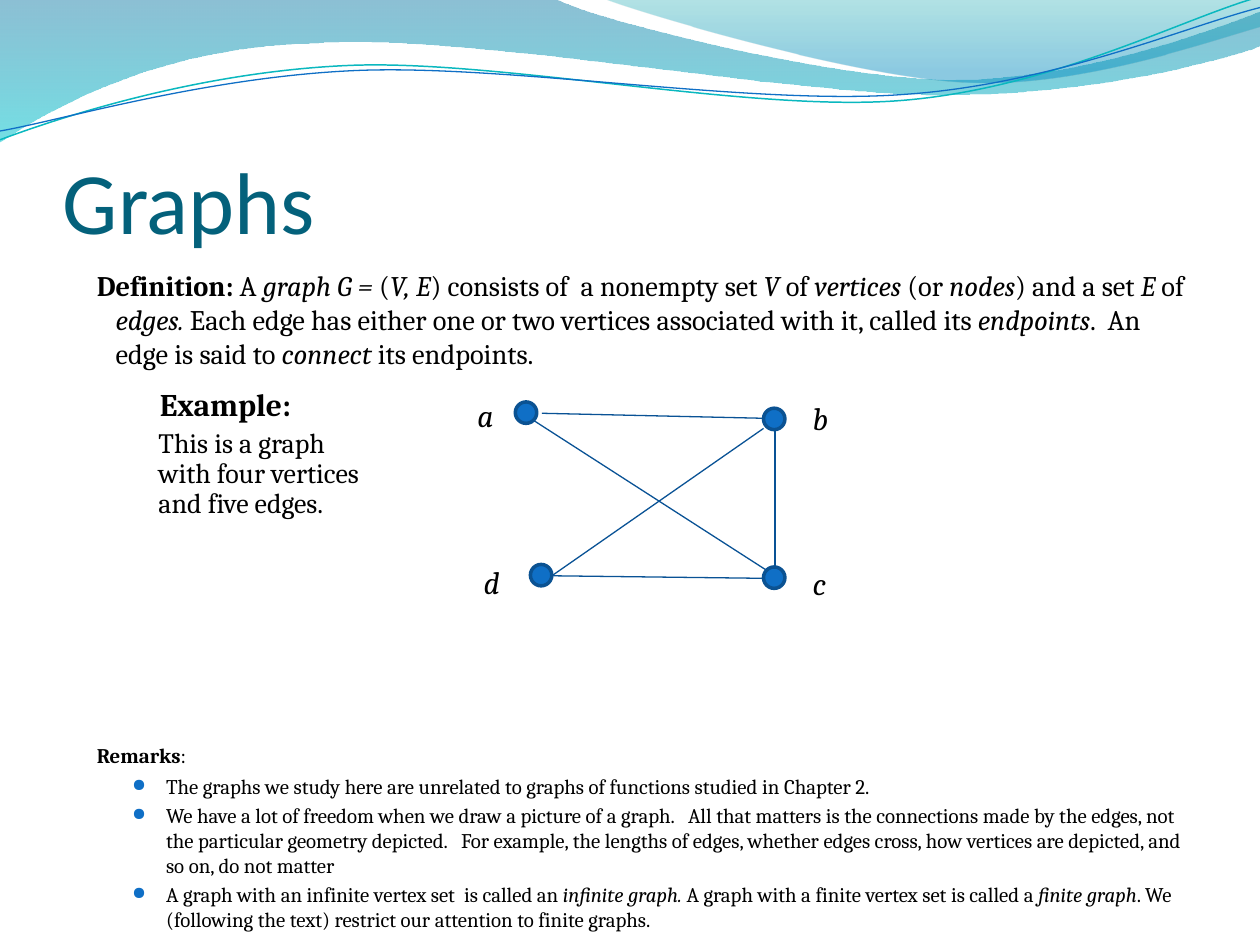
import pptx
import pptx.dml.color
import pptx.enum.shapes
import pptx.enum.text
import pptx.oxml
import pptx.oxml.ns
import pptx.util
from lxml import etree

Inches = pptx.util.Inches
Pt = pptx.util.Pt
RGBColor = pptx.dml.color.RGBColor
ANCHOR = pptx.enum.text.MSO_ANCHOR
qn = pptx.oxml.ns.qn

BLACK = RGBColor(0x00, 0x00, 0x00)
TITLE_TEAL = RGBColor(0x04, 0x61, 0x7B)
BLUE = RGBColor(0x0F, 0x6F, 0xC6)
VERTEX_RIM = RGBColor(0x0B, 0x52, 0x92)
EDGE_BLUE = RGBColor(0x09, 0x52, 0x95)
WAVE_TEAL = RGBColor(0x0A, 0xB8, 0xBF)
BAND_STOPS = [(0, RGBColor(0x00, 0x74, 0xA1), 45), (1, RGBColor(0x00, 0xC6, 0xCF), 55)]
CREST_STOPS = [(0, RGBColor(0x00, 0xA1, 0xA9), 30), (0.8, RGBColor(0x00, 0x8B, 0xBF), 45)]

BAND = [(0, 0), (4.4, -0.01), (4.76, 0.17, 6.64, 0.63, 7.58, 0.63),
        (8.53, 0.63, 9.58, 0.26, 10, 0.09), (10.01, 0.36),
        (9.83, 0.44, 8.7, 0.76, 7.46, 0.75), (6.22, 0.75, 3.82, 0.28, 2.57, 0.34),
        (1.29, 0.36, 0.46, 0.83, -0.01, 1.13), (0, 0)]
CREST = [(4.79, -0.01), (5.09, 0.11, 6.82, 0.62, 7.69, 0.65),
         (8.56, 0.69, 9.61, 0.32, 10, 0.21), (10, 0), (4.79, -0.01)]
TEAL_WAVE = [(0, 1.11), (0.48, 0.93, 1.58, 0.57, 2.77, 0.52),
             (3.95, 0.47, 5.93, 0.89, 7.13, 0.8), (8.33, 0.71, 9.38, 0.15, 9.98, -0.02)]
BLUE_WAVE = [(0, 1.04), (0.47, 0.96, 1.64, 0.61, 2.83, 0.56),
             (4.03, 0.51, 5.97, 0.84, 7.17, 0.75), (8.36, 0.67, 9.41, 0.21, 10, 0.06)]

LABELS = [("a", 3.69, 3.09), ("b", 6.35, 3.12), ("c", 6.35, 4.43), ("d", 3.74, 4.42)]
VERTICES = [(4.09, 3.19), (6.06, 3.24), (6.06, 4.5), (4.21, 4.48)]
VERTEX_SIZE = 0.17
EDGES = [(4.24, 3.34, 6.09, 4.53), (4.38, 4.57, 6.06, 3.4), (4.3, 3.28, 6.06, 3.32),
         (6.15, 3.4, 6.15, 4.5), (4.38, 4.57, 6.06, 4.59)]

DEFINITION = [
    ("Definition:", "b"), (" A ", ""), ("graph G = ", "i"), ("(", ""), ("V, E", "i"),
    (") consists of  a nonempty set ", ""), ("V", "i"), (" of ", ""), ("vertices ", "i"),
    ("(or ", ""), ("nodes", "i"), (") and a set ", ""), ("E", "i"), (" of ", ""),
    ("edges. ", "i"),
    ("Each edge has either one or two vertices associated with it, called its ", ""),
    ("endpoints", "i"), (".  An edge is said to ", ""), ("connect", "i"),
    (" its endpoints.", "")]
REMARKS = [
    [("The graphs we study here are unrelated to graphs of functions studied in "
      "Chapter 2.", "")],
    [("We have a lot of freedom when we draw a picture of a graph.   All that matters is "
      "the connections made by the edges, not the particular geometry depicted.   For "
      "example, the lengths of edges, whether edges cross, how vertices are depicted, "
      "and so on, do not matter", "")],
    [("A graph with an infinite vertex set  is called an ", ""), ("infinite graph. ", "i"),
     ("A graph with a finite vertex set is called a ", ""), ("finite graph", "i"),
     (". We (following the text) restrict our attention to finite graphs.", "")]]


def add_box(page, left, top, width, height, anchor=ANCHOR.TOP, insets=(0.1, 0.05, 0.1, 0.05)):
    box = page.shapes.add_textbox(Inches(left), Inches(top), Inches(width), Inches(height))
    frame = box.text_frame
    frame.word_wrap = True
    frame.vertical_anchor = anchor
    frame.margin_left, frame.margin_top, frame.margin_right, frame.margin_bottom = map(
        Inches, insets)
    return frame


def add_bullet(para):
    properties = para._p.get_or_add_pPr()
    color = etree.SubElement(properties, qn("a:buClr"))
    etree.SubElement(color, qn("a:srgbClr")).set("val", str(BLUE))
    etree.SubElement(properties, qn("a:buSzPct")).set("val", "85000")
    etree.SubElement(properties, qn("a:buFont")).set("typeface", "OpenSymbol")
    etree.SubElement(properties, qn("a:buChar")).set("char", "●")


def write(frame, spans, size, font="Cambria", color=BLACK, margin=0, indent=0,
          before=0, line=None, bullet=False):
    para = frame.paragraphs[0]
    if para.runs:
        para = frame.add_paragraph()
    properties = para._p.get_or_add_pPr()
    properties.set("marL", str(Inches(margin)))
    properties.set("indent", str(Inches(indent)))
    para.space_before = Pt(before)
    if line:
        para.line_spacing = Pt(line)
    if bullet:
        add_bullet(para)
    for text, style in spans:
        span = para.add_run()
        span.text = text
        span.font.size = Pt(size)
        span.font.name = font
        span.font.color.rgb = color
        span.font.bold = "b" in style
        span.font.italic = "i" in style


def add_outline(page, segments, close):
    points = [(Inches(x), Inches(y)) for segment in segments
              for x, y in zip(segment[::2], segment[1::2])]
    builder = page.shapes.build_freeform(*points[0])
    builder.add_line_segments(points[1:], close=close)
    shape = builder.convert_to_shape()
    shape.shadow.inherit = False
    lines = iter(list(shape._element.iter(qn("a:lnTo"))))
    for segment in segments[1:]:
        first = next(lines)
        if len(segment) == 6:
            first.tag = qn("a:cubicBezTo")
            for line in (next(lines), next(lines)):
                first.append(line[0])
                line.getparent().remove(line)
    return shape


def add_gradient_area(page, segments, stops):
    shape = add_outline(page, segments, True)
    shape.line.fill.background()
    shape.fill.gradient()
    shape.fill.gradient_angle = 270
    for stop, (position, color, opacity) in zip(shape.fill.gradient_stops, stops):
        stop.position = position
        stop.color.rgb = color
        choice = stop._gs.find(qn("a:srgbClr"))
        etree.SubElement(choice, qn("a:alpha")).set("val", str(opacity * 1000))


def add_wave(page, segments, color, width):
    shape = add_outline(page, segments, False)
    shape.fill.background()
    shape.line.color.rgb = color
    shape.line.width = Pt(width)


def add_vertex(page, left, top):
    vertex = page.shapes.add_shape(
        pptx.enum.shapes.MSO_SHAPE.OVAL, Inches(left), Inches(top),
        Inches(VERTEX_SIZE), Inches(VERTEX_SIZE))
    vertex.shadow.inherit = False
    vertex.fill.solid()
    vertex.fill.fore_color.rgb = BLUE
    vertex.line.color.rgb = VERTEX_RIM
    vertex.line.width = Pt(2)


def add_edge(page, *ends):
    edge = page.shapes.add_connector(
        pptx.enum.shapes.MSO_CONNECTOR.STRAIGHT, *map(Inches, ends))
    edge.line.color.rgb = EDGE_BLUE
    edge.line.width = Pt(0.75)
    etree.SubElement(edge._element.spPr, qn("a:effectLst"))


def main():
    deck = pptx.Presentation()
    deck.slide_width, deck.slide_height = Inches(10), Inches(7.5)
    page = deck.slides.add_slide(deck.slide_layouts[6])

    add_gradient_area(page, BAND, BAND_STOPS)
    add_gradient_area(page, CREST, CREST_STOPS)
    add_wave(page, TEAL_WAVE, WAVE_TEAL, 0.85)
    add_wave(page, BLUE_WAVE, BLUE, 0.75)

    title = add_box(page, 0.5, 0.75, 9, 1.25, ANCHOR.BOTTOM, (0, 0.05, 0, 0))
    write(title, [("Graphs", "")], 50, font="Calibri", color=TITLE_TEAL)

    body = add_box(page, 0.52, 2.08, 9, 4.8)
    write(body, DEFINITION, 16.2, margin=0.3, indent=-0.15)
    write(body, [("Remarks", "b"), (":", "")], 11.9, margin=0.15, before=212.6)
    for number, remark in enumerate(REMARKS):
        write(body, remark, 11.9, margin=0.7, indent=-0.27,
              before=2.4 if number else 3.5, bullet=True)

    for edge in EDGES:
        add_edge(page, *edge)
    for vertex in VERTICES:
        add_vertex(page, *vertex)
    for name, left, top in LABELS:
        write(add_box(page, left, top, 0.35, 0.4), [(name, "i")], 18)

    write(add_box(page, 1.17, 3.01, 1.38, 0.4), [("Example:", "b")], 18)
    write(add_box(page, 1.16, 3.36, 1.83, 1.05),
          [("This is a graph with four vertices and five edges.", "")], 16, line=17)
    deck.save("out.pptx")


if __name__ == "__main__":
    main()
